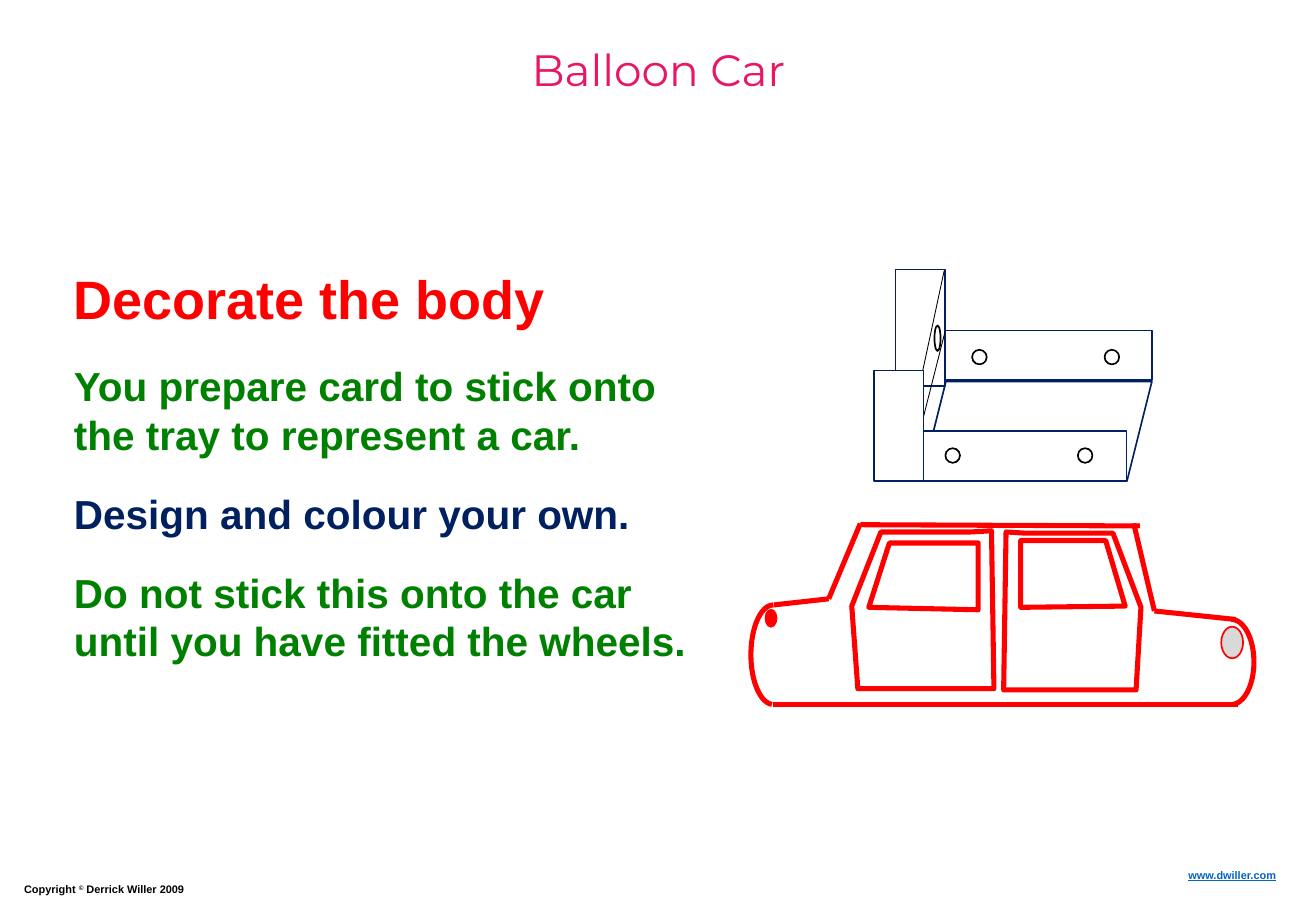
import pptx
import pptx.util
import pptx.oxml.ns
from lxml import etree
from pptx.dml.color import RGBColor
from pptx.enum.shapes import MSO_CONNECTOR, MSO_SHAPE, MSO_SHAPE_TYPE
from pptx.enum.text import MSO_ANCHOR, MSO_AUTO_SIZE, PP_ALIGN
from pptx.util import Inches

PINK = RGBColor(0xE8, 0x17, 0x66)
RED = RGBColor(0xFF, 0x00, 0x00)
GREEN = RGBColor(0x00, 0x80, 0x00)
NAVY = RGBColor(0x00, 0x20, 0x60)
BLUE = RGBColor(0x05, 0x63, 0xC1)
GREY = RGBColor(0xD9, 0xD9, 0xD9)
BLACK = RGBColor(0x00, 0x00, 0x00)
WHITE = RGBColor(0xFF, 0xFF, 0xFF)


def add_text(paragraph, text, size, color, font="Arial", bold=True, underline=False, baseline=0):
    """Append one run; baseline is a raise in percent of the size."""
    run = paragraph.add_run()
    run.text = text
    run.font.name = font
    run.font.size = pptx.util.Pt(size)
    run.font.bold = bold
    run.font.underline = underline
    run.font.color.rgb = color
    if baseline:
        run._r.get_or_add_rPr().set("baseline", str(baseline * 1000))


def outline(part, color, width, fill=None):
    """Set line, fill and no shadow on a shape or a connector."""
    part.line.color.rgb = color
    part.line.width = pptx.util.Pt(width)
    if part.shape_type == MSO_SHAPE_TYPE.LINE:
        etree.SubElement(part._element.spPr, pptx.oxml.ns.qn("a:effectLst"))
        return
    part.shadow.inherit = False
    if fill is None:
        part.fill.background()
    else:
        part.fill.solid()
        part.fill.fore_color.rgb = fill


deck = pptx.Presentation()
deck.slide_width = Inches(10.83)
deck.slide_height = Inches(7.5)
slide = deck.slides.add_slide(deck.slide_layouts[5])
shapes = slide.shapes

# Title
title = shapes.title
title.left, title.top, title.width, title.height = map(Inches, (3.96, 0.3, 2.92, 0.64))
title.text_frame.auto_size = MSO_AUTO_SIZE.NONE
title.text_frame.vertical_anchor = MSO_ANCHOR.TOP
heading = title.text_frame.paragraphs[0]
heading.alignment = PP_ALIGN.CENTER
add_text(heading, "Balloon Car", 26, PINK, font="Montserrat", bold=False)

# Footer
copyright_frame = shapes.add_textbox(Inches(0.1), Inches(7.22), Inches(4.59), Inches(0.21)).text_frame
copyright_frame.word_wrap = True
notice = copyright_frame.paragraphs[0]
add_text(notice, "Copyright ", 6.5, BLACK)
add_text(notice, "©", 6.5, BLACK, baseline=30)
add_text(notice, " Derrick Willer 2009", 6.5, BLACK)

website_frame = shapes.add_textbox(Inches(9.51), Inches(7.1), Inches(1.09), Inches(0.21)).text_frame
website_frame.word_wrap = True
website = website_frame.paragraphs[0]
website.alignment = PP_ALIGN.RIGHT
add_text(website, "www.dwiller.com", 6.5, BLUE, underline=True)

# Instructions
instructions = shapes.add_textbox(Inches(0.51), Inches(2.12), Inches(5.49), Inches(3.42)).text_frame
instructions.word_wrap = True
instructions.vertical_anchor = MSO_ANCHOR.MIDDLE
add_text(instructions.paragraphs[0], "Decorate the body", 32, RED)
for step, color in [
    ("You prepare card to stick onto the tray to represent a car.", GREEN),
    ("Design and colour your own.", NAVY),
    ("Do not stick this onto the car until you have fitted the wheels.", GREEN),
]:
    paragraph = instructions.add_paragraph()
    paragraph.space_before = pptx.util.Pt(18)
    add_text(paragraph, step, 24, color)

# Tray: panels, fold lines, front end, holes
for kind, box, fill in [
    (MSO_SHAPE.PARALLELOGRAM, (7.58, 3.14, 1.9, 0.82), None),
    (MSO_SHAPE.RECTANGLE, (7.57, 3.55, 1.7, 0.41), WHITE),
    (MSO_SHAPE.RECTANGLE, (7.78, 2.72, 1.7, 0.41), None),
    (MSO_SHAPE.RECTANGLE, (7.37, 2.22, 0.41, 0.96), None),
]:
    outline(shapes.add_shape(kind, *map(Inches, box)), NAVY, 1, fill)

for ends in [(7.78, 2.72, 7.57, 3.55), (7.77, 2.23, 7.59, 3.07)]:
    fold = shapes.add_connector(MSO_CONNECTOR.STRAIGHT, *map(Inches, ends))
    outline(fold, BLACK, 0.5)

front_end = shapes.add_shape(MSO_SHAPE.RECTANGLE, *map(Inches, (7.19, 3.05, 0.41, 0.91)))
outline(front_end, NAVY, 1, WHITE)

axle_holes = [(x, y, 0.12, 0.12) for x, y in [(8, 2.88), (9.09, 2.88), (7.78, 3.69), (8.87, 3.69)]]
for box in [(7.69, 2.68, 0.05, 0.21)] + axle_holes:
    outline(shapes.add_shape(MSO_SHAPE.OVAL, *map(Inches, box)), BLACK, 1, WHITE)

# Car: body edges, rounded ends, doors and windows, lights
for ends in [
    (7.08, 4.32, 9.38, 4.33),
    (6.36, 5.8, 10.19, 5.8),
    (9.5, 5.03, 10.17, 5.1),
    (7.08, 4.31, 6.82, 4.93),
    (6.37, 4.98, 6.82, 4.93),
    (9.33, 4.31, 9.5, 5.03),
]:
    edge = shapes.add_connector(MSO_CONNECTOR.STRAIGHT, *map(Inches, ends))
    outline(edge, RED, 3)

for box, mirrored in [((9.95, 5.1, 0.37, 0.7), False), ((6.18, 4.98, 0.37, 0.82), True)]:
    bumper = shapes.add_shape(MSO_SHAPE.ARC, *map(Inches, box))
    bumper.adjustments[0] = 162
    bumper.adjustments[1] = 52.99
    if mirrored:
        bumper._element.spPr.xfrm.set("flipH", "1")
    outline(bumper, RED, 3)

for corners in [
    [(8.44, 4.39), (9.16, 4.39), (9.39, 5), (9.35, 5.68), (8.26, 5.68), (8.28, 4.38)],
    [(8.4, 4.45), (9.1, 4.45), (9.26, 4.99), (8.4, 5)],
    [(7.99, 4.38), (7.25, 4.38), (7.01, 4.99), (7.06, 5.67), (8.18, 5.67), (8.16, 4.37)],
    [(8.05, 4.47), (7.32, 4.47), (7.15, 5), (8.05, 5.02)],
]:
    start, *others = [(Inches(x), Inches(y)) for x, y in corners]
    panel = shapes.build_freeform(*start)
    panel.add_line_segments(others, close=True)
    outline(panel.convert_to_shape(), RED, 3, WHITE)

for box, fill in [((10.05, 5.16, 0.18, 0.26), GREY), ((6.3, 5.02, 0.09, 0.14), RED)]:
    outline(shapes.add_shape(MSO_SHAPE.OVAL, *map(Inches, box)), RED, 1, fill)

deck.save("out.pptx")
